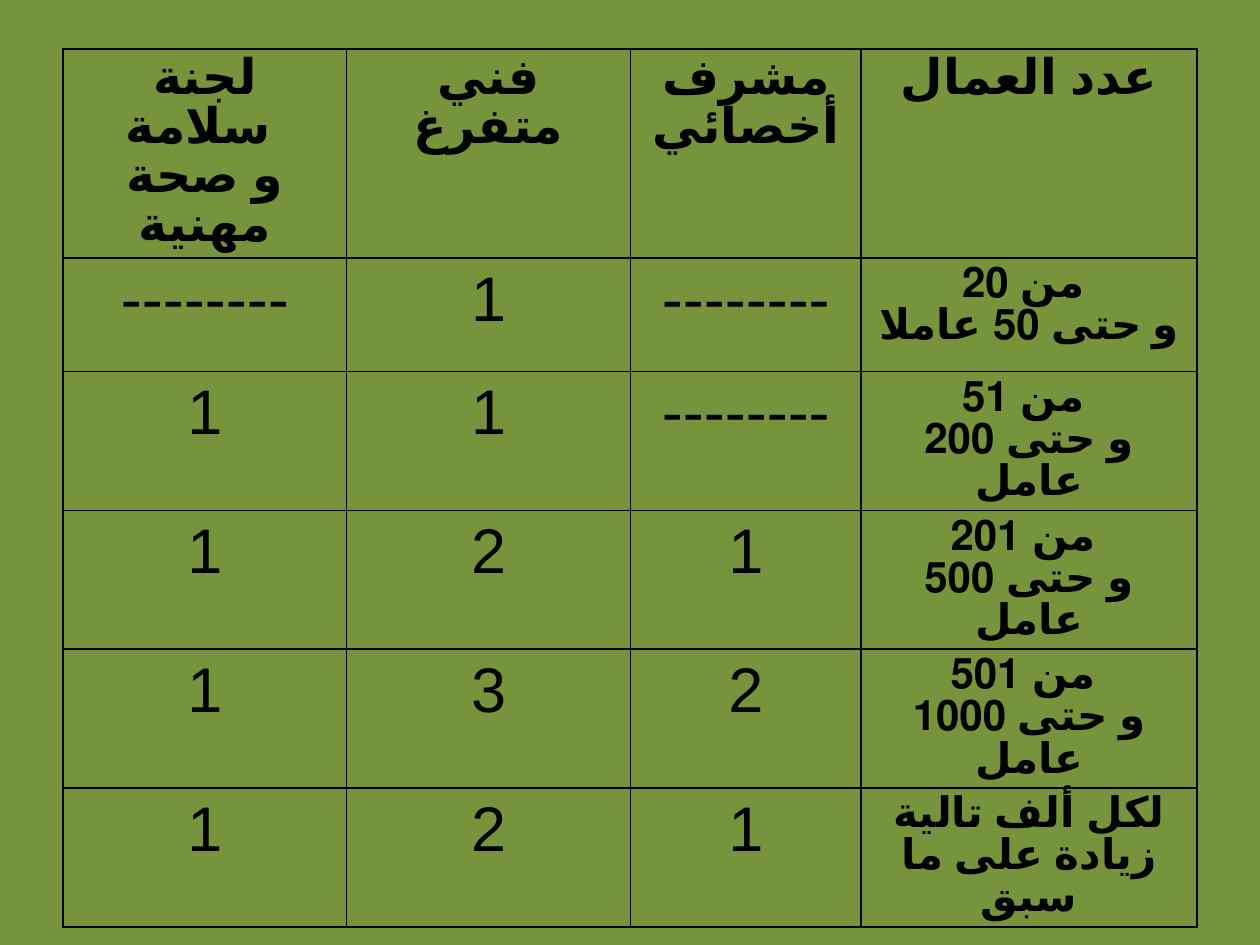
"""Build a slide with a table of safety staff required by number of workers."""
from dataclasses import dataclass

from lxml import etree
from pptx import Presentation
from pptx.dml.color import RGBColor
from pptx.enum.lang import MSO_LANGUAGE_ID
from pptx.enum.text import PP_ALIGN
from pptx.oxml.ns import qn
from pptx.util import Cm, Pt

ARABIC = MSO_LANGUAGE_ID.ARABIC
CENTER = PP_ALIGN.CENTER
FONT = "Arial"
BLACK = "000000"
GREEN = "77933C"
BORDER_TAGS = ("a:lnL", "a:lnR", "a:lnT", "a:lnB")
COLUMN_WIDTHS = (5.72, 5.72, 4.65, 6.77)
ROW_HEIGHTS = (4.19, 2.29, 2.8, 2.8, 2.8, 2.8)


@dataclass(frozen=True)
class TextStyle:
    size: int
    bold: bool
    spacing: float | Pt


@dataclass(frozen=True)
class StaffRow:
    committee: str
    technician: str
    supervisor: str
    workers: tuple[str, ...]


HEADER = TextStyle(28, True, Pt(28))
COUNT = TextStyle(36, False, 1.0)
WORKERS = TextStyle(24, True, Pt(24))
NONE = "--------"

HEADINGS = (
    ("لجنة سلامة ", "و صحة مهنية"),
    ("فني متفرغ",),
    ("مشرف أخصائي",),
    ("عدد العمال",),
)
STAFF_ROWS = (
    StaffRow(NONE, "1", NONE, ("من 20 ", "و حتى 50 عاملا")),
    StaffRow("1", "1", NONE, ("من 51 ", "و حتى 200 عامل")),
    StaffRow("1", "2", "1", ("من 201 ", "و حتى 500 عامل")),
    StaffRow("1", "3", "2", ("من 501 ", "و حتى 1000 عامل")),
    StaffRow("1", "2", "1", ("لكل ألف تالية زيادة على ما سبق",)),
)


def color(value: str) -> RGBColor:
    """Turn a hex string into a colour."""
    return RGBColor.from_string(value)


def draw_borders(cell) -> None:
    """Draw a thin black line on each side of a cell."""
    properties = cell._tc.get_or_add_tcPr()
    for position, tag in enumerate(BORDER_TAGS):
        line = etree.Element(qn(tag), w=str(Pt(1)))
        fill = etree.SubElement(line, qn("a:solidFill"))
        etree.SubElement(fill, qn("a:srgbClr"), val=BLACK)
        properties.insert(position, line)


def write_cell(cell, lines: tuple[str, ...], style: TextStyle) -> None:
    """Write centred paragraphs into a bordered cell without fill."""
    cell.fill.background()
    draw_borders(cell)
    frame = cell.text_frame
    for number, line in enumerate(lines):
        para = frame.add_paragraph() if number else frame.paragraphs[0]
        para.alignment = CENTER
        para.line_spacing = style.spacing
        span = para.add_run()
        span.text = line
        span.font.name = FONT
        span.font.size = Pt(style.size)
        span.font.bold = style.bold
        span.font.color.rgb = color(BLACK)
        span.font.language_id = ARABIC


def add_staff_table(page) -> None:
    """Add the table and fill its header and staff rows."""
    frame = page.shapes.add_table(
        len(ROW_HEIGHTS), len(COLUMN_WIDTHS), Cm(1.27), Cm(0.99),
        Cm(sum(COLUMN_WIDTHS)), Cm(sum(ROW_HEIGHTS)),
    )
    table = frame.table
    table.first_row = False
    table.horz_banding = False
    for column, width in zip(table.columns, COLUMN_WIDTHS):
        column.width = Cm(width)
    for row, height in zip(table.rows, ROW_HEIGHTS):
        row.height = Cm(height)
    for cell, heading in zip(table.rows[0].cells, HEADINGS):
        write_cell(cell, heading, HEADER)
    for number, staff in enumerate(STAFF_ROWS, start=1):
        counts = (staff.committee, staff.technician, staff.supervisor)
        for column, count in enumerate(counts):
            write_cell(table.cell(number, column), (count,), COUNT)
        write_cell(table.cell(number, len(counts)), staff.workers, WORKERS)


def main() -> None:
    """Build and save the deck."""
    deck = Presentation()
    deck.slide_width = Cm(25.4)
    deck.slide_height = Cm(19.05)
    page = deck.slides.add_slide(deck.slide_layouts[6])
    page.background.fill.solid()
    page.background.fill.fore_color.rgb = color(GREEN)
    add_staff_table(page)
    deck.save("out.pptx")


if __name__ == "__main__":
    main()
